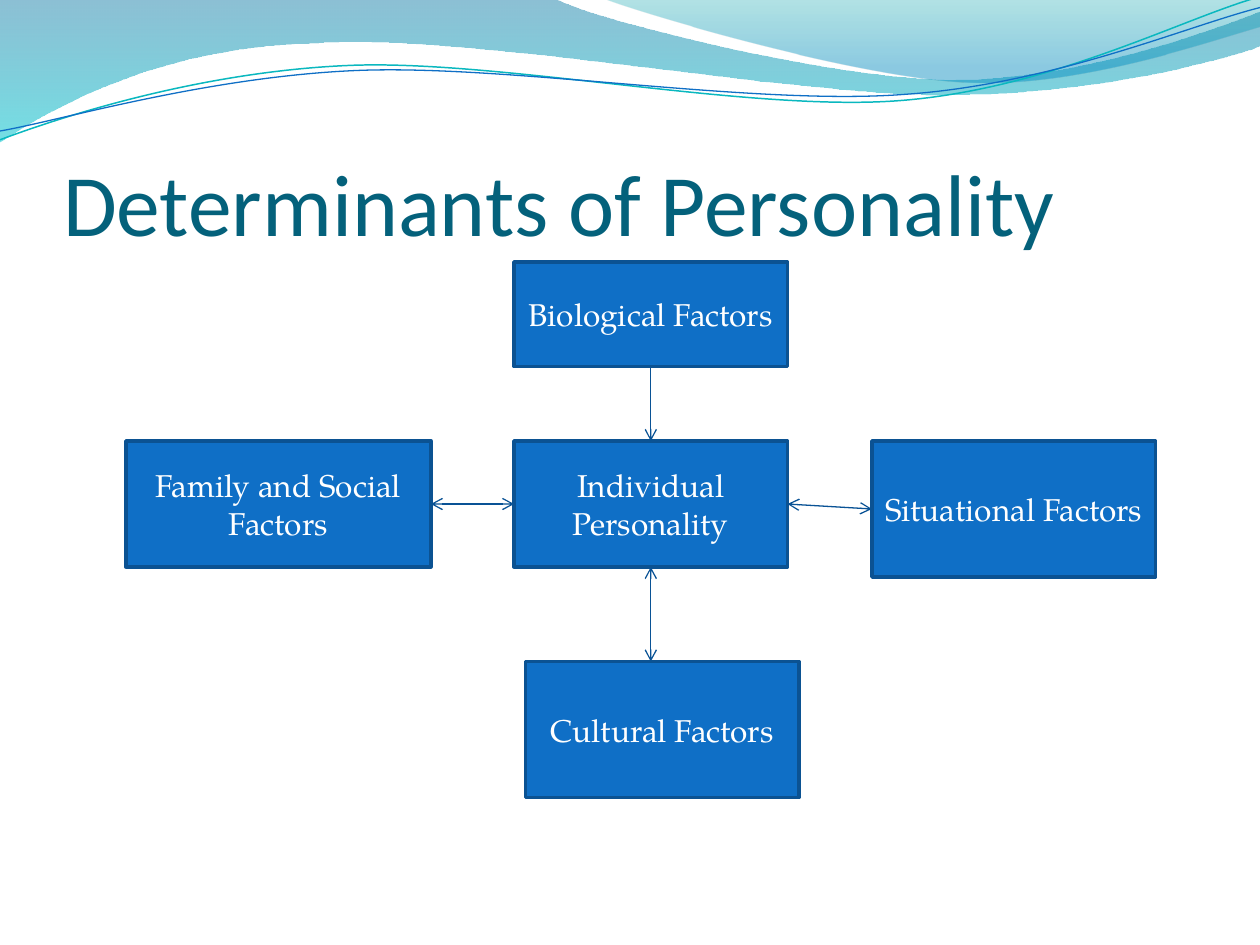
from pptx import Presentation, util as u
from pptx.dml.color import RGBColor
from pptx.enum import shapes, text
from pptx.oxml import ns
from lxml import etree

TITLE = "Determinants of Personality"
BOXES = {
    "family": ("Family and Social Factors", 1, 3.5, 2.42, 1),
    "person": ("Individual Personality", 4.08, 3.5, 2.17, 1),
    "situation": ("Situational Factors", 6.92, 3.5, 2.25, 1.08),
    "biology": ("Biological Factors", 4.08, 2.08, 2.17, 0.83),
    "culture": ("Cultural Factors", 4.17, 5.25, 2.17, 1.08),
}
TOP, LEFT, BOTTOM, RIGHT = range(4)
ARROWS = [
    ("person", RIGHT, "situation", LEFT, True),
    ("family", RIGHT, "person", LEFT, True),
    ("person", BOTTOM, "culture", None, True),
    ("biology", BOTTOM, "person", TOP, False),
]
WAVES = [
    ([(0, 0), (4.4, -0.01), (4.76, 0.17, 6.64, 0.63, 7.58, 0.63),
      (8.53, 0.63, 9.58, 0.26, 10, 0.09), (10.01, 0.36),
      (9.83, 0.44, 8.7, 0.76, 7.46, 0.75), (6.22, 0.75, 3.82, 0.28, 2.57, 0.34),
      (1.29, 0.36, 0.46, 0.83, -0.01, 1.13), (0, 0)],
     [(0, "0074A1", 45), (1, "00C6CF", 55)]),
    ([(4.79, -0.01), (5.09, 0.11, 6.82, 0.62, 7.69, 0.65),
      (8.56, 0.69, 9.61, 0.32, 10, 0.21), (10, 0), (4.79, -0.01)],
     [(0, "00A1A9", 30), (0.8, "008BBF", 45)]),
]
STRANDS = [
    ([(0, 1.11), (0.48, 0.93, 1.58, 0.57, 2.77, 0.52),
      (3.95, 0.47, 5.93, 0.89, 7.13, 0.8), (8.33, 0.71, 9.38, 0.15, 9.98, -0.02)],
     "0AB8BF", 0.85),
    ([(0, 1.04), (0.47, 0.96, 1.64, 0.61, 2.83, 0.56),
      (4.03, 0.51, 5.97, 0.84, 7.17, 0.75), (8.36, 0.67, 9.41, 0.21, 10, 0.06)],
     "0F6FC6", 0.75),
]


def rgb(value):
    return RGBColor.from_string(value)


def set_line(line, color, width):
    line.color.rgb = rgb(color)
    line.width = u.Pt(width)


def set_font(font, name, size, color):
    font.name, font.size = name, u.Pt(size)
    font.color.rgb = rgb(color)


def add_curve(s, segments, close):
    start, *rest = [tuple(map(u.Inches, seg)) for seg in segments]
    builder = s.shapes.build_freeform(*start, scale=1.0)
    builder.add_line_segments([seg[-2:] for seg in rest], close=close)
    sp = builder.convert_to_shape()
    sp.shadow.inherit = False
    lines = list(sp.element.spPr.iter(ns.qn("a:lnTo")))
    for line, seg in zip(lines, rest):
        if len(seg) == 6:
            bezier = etree.Element(ns.qn("a:cubicBezTo"))
            for x, y in zip(seg[::2], seg[1::2]):
                etree.SubElement(bezier, ns.qn("a:pt"),
                                 x=str(x - sp.left), y=str(y - sp.top))
            line.getparent().replace(line, bezier)
    return sp


def add_wave(s, segments, stops):
    sp = add_curve(s, segments, True)
    sp.line.fill.background()
    sp.fill.gradient()
    sp.fill.gradient_angle = 270
    for stop, (position, color, _) in zip(sp.fill.gradient_stops, stops):
        stop.position = position
        stop.color.rgb = rgb(color)
    for clr, (_, _, opacity) in zip(sp.element.spPr.iter(ns.qn("a:srgbClr")), stops):
        etree.SubElement(clr, ns.qn("a:alpha"), val=str(opacity * 1000))


def add_strand(s, segments, color, width):
    sp = add_curve(s, segments, False)
    sp.fill.background()
    set_line(sp.line, color, width)


def add_box(s, label, *place):
    sp = s.shapes.add_shape(shapes.MSO_SHAPE.RECTANGLE, *map(u.Inches, place))
    sp.shadow.inherit = False
    sp.fill.solid()
    sp.fill.fore_color.rgb = rgb("0F6FC6")
    set_line(sp.line, "0B5292", 2)
    tf = sp.text_frame
    tf.word_wrap = True
    tf.vertical_anchor = text.MSO_ANCHOR.MIDDLE
    p = tf.paragraphs[0]
    p.text = label
    p.alignment = text.PP_ALIGN.CENTER
    set_font(p.font, "TeX Gyre Pagella", 18, "FFFFFF")
    return sp


def add_arrow(s, start, start_side, end, end_side, double):
    c = s.shapes.add_connector(shapes.MSO_CONNECTOR.STRAIGHT, 0, 0, 0, 0)
    c.begin_connect(start, start_side)
    if end_side is None:
        c.end_x, c.end_y = c.begin_x, end.top
    else:
        c.end_connect(end, end_side)
    set_line(c.line, "095295", 0.75)
    ln = c.element.spPr.find(ns.qn("a:ln"))
    for tag in ("a:headEnd", "a:tailEnd") if double else ("a:tailEnd",):
        etree.SubElement(ln, ns.qn(tag), type="arrow")
    etree.SubElement(c.element.spPr, ns.qn("a:effectLst"))


def add_title(s):
    title = s.shapes.title
    title.element.getparent().append(title.element)
    title.left, title.top, title.width, title.height = map(u.Inches, (0.5, 0.77, 9, 1.25))
    tf = title.text_frame
    tf.word_wrap = True
    tf.vertical_anchor = text.MSO_ANCHOR.BOTTOM
    tf.margin_left = tf.margin_right = tf.margin_bottom = 0
    tf.margin_top = u.Inches(0.05)
    p = tf.paragraphs[0]
    p.text = TITLE
    p.alignment = text.PP_ALIGN.LEFT
    set_font(p.font, "Calibri", 50, "04617B")


def main():
    prs = Presentation()
    prs.slide_width, prs.slide_height = u.Inches(10), u.Inches(7.5)
    s = prs.slides.add_slide(prs.slide_layouts[5])
    for wave in WAVES:
        add_wave(s, *wave)
    for strand in STRANDS:
        add_strand(s, *strand)
    add_title(s)
    boxes = {key: add_box(s, *box) for key, box in BOXES.items()}
    for start, start_side, end, end_side, double in ARROWS:
        add_arrow(s, boxes[start], start_side, boxes[end], end_side, double)
    prs.save("out.pptx")


if __name__ == "__main__":
    main()
